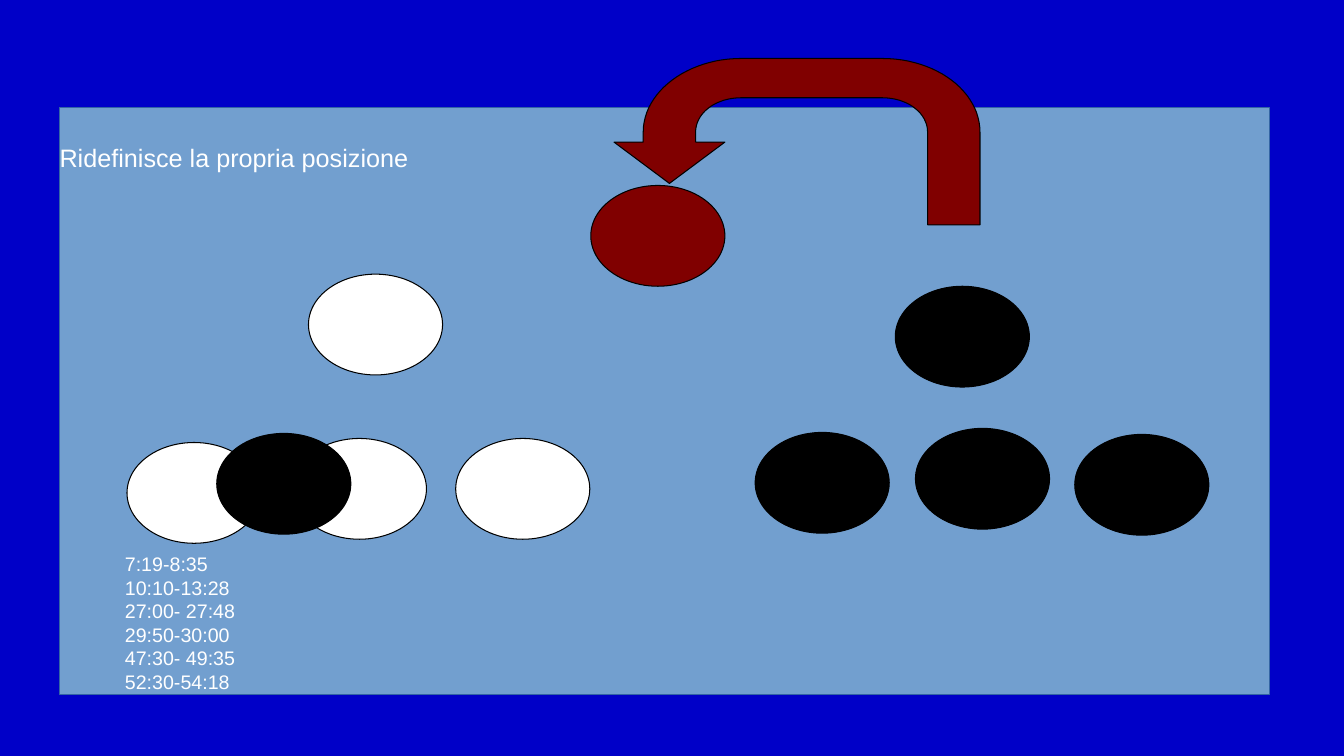
from pptx import Presentation, util as u
from pptx.dml import color
from pptx.enum import shapes as sh, text as tx

WIDE, HIGH = 13.33, 7.5
WHITE, BLACK, RED = "FFFFFF", "000000", "800000"
OVAL = (1.33, 1)
TIMES = ["7:19-8:35", "10:10-13:28", "27:00- 27:48",
         "29:50-30:00", "47:30- 49:35", "52:30-54:18"]


def rgb(code):
    return color.RGBColor.from_string(code)


def inch(*nums):
    return [u.Inches(n) for n in nums]


def paint(shape, fill, line):
    shape.shadow.inherit = False
    shape.fill.solid()
    shape.fill.fore_color.rgb = rgb(fill)
    shape.line.color.rgb = rgb(line)
    shape.line.width = u.Pt(0.75)


def panel(slide, box):
    rect = slide.shapes.add_shape(sh.MSO_SHAPE.RECTANGLE, *inch(*box))
    paint(rect, "729FCF", "3465A4")


def team(slide, box, fill, spots):
    left, top = box
    for x, y in spots:
        oval = slide.shapes.add_shape(
            sh.MSO_SHAPE.OVAL, *inch(left + x, top + y, *OVAL))
        paint(oval, fill, BLACK)


def curve(a, b, c, d, steps=24):
    for i in range(1, steps + 1):
        t = i / steps
        s = 1 - t
        yield tuple(s**3 * p + 3 * s * s * t * q + 3 * s * t * t * r + t**3 * v
                    for p, q, r, v in zip(a, b, c, d))


def arrow(slide, box):
    left, top, wide, high = box
    start = (wide, high)
    pts = [
        (wide, 0.73),
        *curve((wide, 0.73), (wide, 0.33), (3.2, 0), (2.66, 0)),
        (1.26, 0),
        *curve((1.26, 0), (0.73, 0), (0.29, 0.33), (0.29, 0.73)),
        (0.29, 0.83), (0, 0.83), (0.55, 1.24), (1.1, 0.83), (0.81, 0.83),
        (0.81, 0.73),
        *curve((0.81, 0.73), (0.81, 0.54), (1.01, 0.39), (1.26, 0.39)),
        (2.66, 0.39),
        *curve((2.66, 0.39), (2.91, 0.39), (3.11, 0.54), (3.11, 0.73)),
        (3.11, high),
    ]
    pen = slide.shapes.build_freeform(
        *(round(n * 1000) for n in start), scale=u.Inches(1) / 1000)
    pen.add_line_segments([(round(x * 1000), round(y * 1000)) for x, y in pts])
    paint(pen.convert_to_shape(*inch(left, top)), RED, BLACK)


def write(shape, box, lines, size):
    spot = dict(zip(("left", "top", "width", "height"), inch(*box)))
    for name, val in spot.items():
        setattr(shape, name, val)
    frame = shape.text_frame
    frame.text = "\n".join(lines)
    look = {"word_wrap": True, "auto_size": tx.MSO_AUTO_SIZE.NONE,
            "vertical_anchor": tx.MSO_ANCHOR.TOP}
    for name, val in look.items():
        setattr(frame, name, val)
    style = {"name": "Arial", "size": u.Pt(size), "bold": False}
    for para in frame.paragraphs:
        para.alignment = tx.PP_ALIGN.LEFT
        for name, val in style.items():
            setattr(para.font, name, val)
        para.font.color.rgb = rgb(WHITE)


def scene(deck):
    slide = deck.slides.add_slide(deck.slide_layouts[5])
    back = slide.background.fill
    back.solid()
    back.fore_color.rgb = rgb("0000C8")
    panel(slide, (0.59, 1.07, 12, 5.82))
    team(slide, (1.26, 2.72), WHITE,
         [(1.64, 1.63), (0, 1.67), (1.8, 0), (3.26, 1.63)])
    team(slide, (7.49, 2.84), BLACK,
         [(1.39, 0), (0, 1.45), (1.59, 1.41), (3.17, 1.47)])
    arrow(slide, (6.09, 0.58, 3.63, 1.65))
    team(slide, (5.86, 1.84), RED, [(0, 0)])
    times = slide.shapes.add_textbox(0, 0, 0, 0)
    write(times, (1.14, 5.43, 7.49, 1.5), TIMES, 14)
    title = slide.shapes.title
    write(title, (0.49, 1.36, 7.49, 0.7),
          ["Ridefinisce la propria posizione"], 18)
    slide.shapes.element.append(title.element)
    team(slide, (2.15, 4.3), BLACK, [(0, 0)])


def main():
    deck = Presentation()
    deck.slide_width, deck.slide_height = inch(WIDE, HIGH)
    scene(deck)
    deck.save("out.pptx")


if __name__ == "__main__":
    main()
